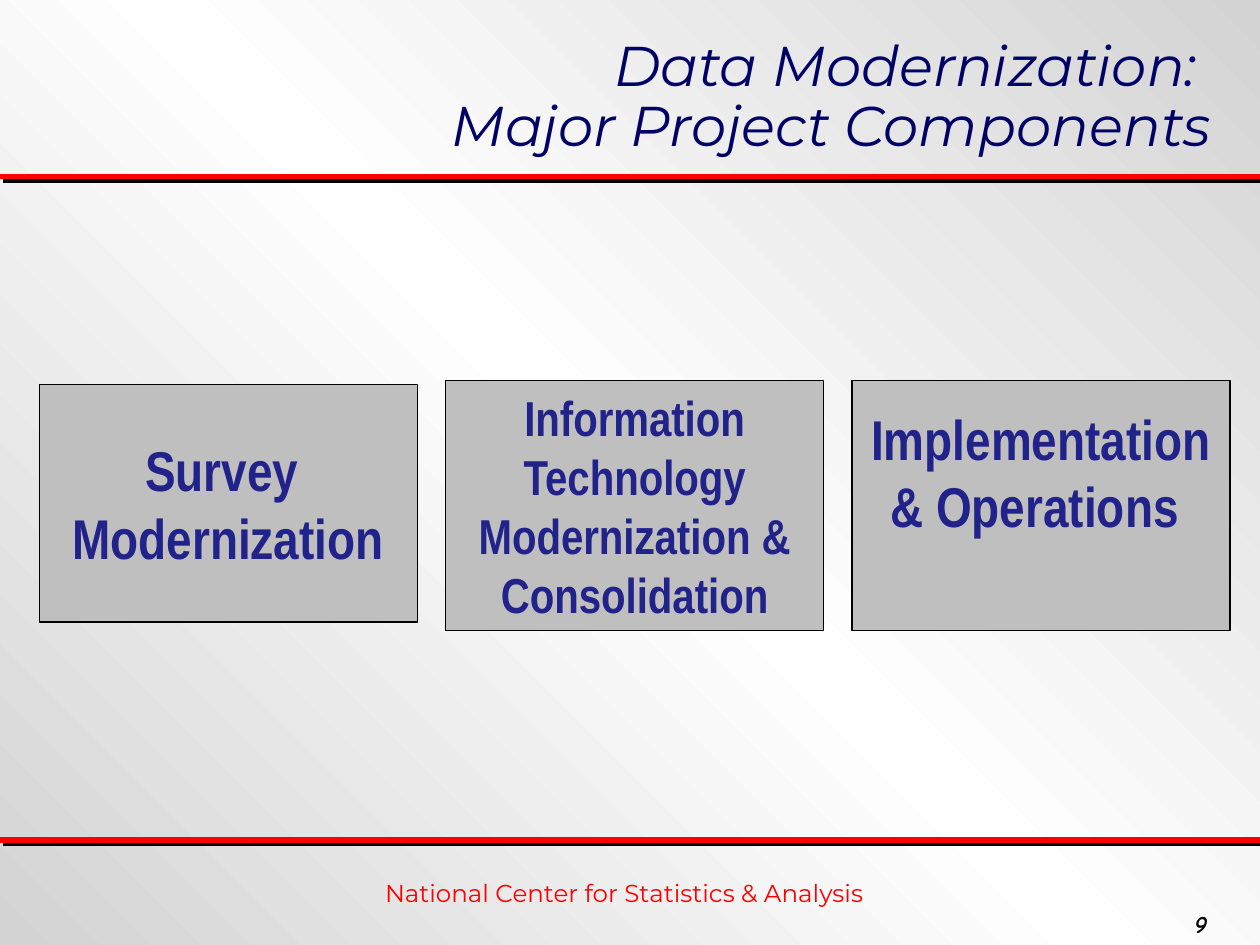
import pptx
import pptx.dml.color
import pptx.enum.shapes
import pptx.enum.text
import pptx.oxml
import pptx.oxml.ns
import pptx.util
from dataclasses import dataclass

Pt = pptx.util.Pt
Align = pptx.enum.text.PP_ALIGN
Anchor = pptx.enum.text.MSO_ANCHOR
NAMESPACE = pptx.oxml.ns.nsdecls("a")


@dataclass(frozen=True)
class Theme:
    heading_font: str = "Montserrat"
    box_font: str = "Arial Narrow"
    number_font: str = "Comic Neue"
    title_color: str = "000066"
    accent: str = "FF0000"
    ink: str = "000000"
    box_text: str = "22228B"
    box_fill: str = "BFBFBF"
    background: tuple = ((0, "D3D3D3"), (50, "FFFFFF"), (100, "D3D3D3"))
    large: int = 32
    medium: int = 28
    small: int = 14


def rgb(color):
    return pptx.dml.color.RGBColor.from_string(color)


class SlideBuilder:
    def __init__(self, slide, theme):
        self.slide = slide
        self.theme = theme

    def set_text(self, shape, text, font, size, color, align, bold=False, italic=False):
        frame = shape.text_frame
        frame.text = text
        for paragraph in frame.paragraphs:
            paragraph.alignment = align
            for run in paragraph.runs:
                run.font.name = font
                run.font.size = Pt(size)
                run.font.color.rgb = rgb(color)
                run.font.bold = bold
                run.font.italic = italic
        return frame

    def background(self):
        fill = self.slide.background.fill
        fill.gradient()
        fill.gradient_angle = 45
        stops = self.slide.element.find(".//" + pptx.oxml.ns.qn("a:gsLst"))
        for stop in list(stops):
            stops.remove(stop)
        for position, color in self.theme.background:
            stops.append(pptx.oxml.parse_xml(
                f'<a:gs {NAMESPACE} pos="{position * 1000}"><a:srgbClr val="{color}"/></a:gs>'))

    def title(self, text, left, top, width, height):
        shape = self.slide.shapes.title
        shape.left, shape.top, shape.width, shape.height = map(Pt, (left, top, width, height))
        frame = self.set_text(shape, text, self.theme.heading_font, self.theme.large,
                              self.theme.title_color, Align.RIGHT, italic=True)
        frame.auto_size = pptx.enum.text.MSO_AUTO_SIZE.NONE
        frame.vertical_anchor = Anchor.MIDDLE
        frame.paragraphs[0].line_spacing = 0.9

    def rule(self, top, width):
        line = self.slide.shapes.add_connector(
            pptx.enum.shapes.MSO_CONNECTOR.STRAIGHT, Pt(0), Pt(top), Pt(width), Pt(top))
        line.line.color.rgb = rgb(self.theme.accent)
        line.line.width = Pt(3)
        # Hard drop shadow, down and to the right
        line.element.spPr.append(pptx.oxml.parse_xml(
            f'<a:effectLst {NAMESPACE}><a:outerShdw blurRad="0" dist="{Pt(2.8)}" dir="2700000" '
            f'algn="ctr" rotWithShape="0"><a:srgbClr val="{self.theme.ink}"/>'
            '</a:outerShdw></a:effectLst>'))

    def label(self, text, left, top, width, height, font, color, align, **style):
        shape = self.slide.shapes.add_textbox(Pt(left), Pt(top), Pt(width), Pt(height))
        frame = self.set_text(shape, text, font, self.theme.small, color, align, **style)
        frame.word_wrap = True

    def box(self, text, left, top, width, height, size, bottom_margin):
        shape = self.slide.shapes.add_shape(
            pptx.enum.shapes.MSO_SHAPE.RECTANGLE, Pt(left), Pt(top), Pt(width), Pt(height))
        shape.shadow.inherit = False
        shape.fill.solid()
        shape.fill.fore_color.rgb = rgb(self.theme.box_fill)
        shape.line.color.rgb = rgb(self.theme.ink)
        shape.line.width = Pt(0.75)
        frame = self.set_text(shape, text, self.theme.box_font, size,
                              self.theme.box_text, Align.CENTER, bold=True)
        frame.word_wrap = True
        frame.vertical_anchor = Anchor.MIDDLE
        frame.margin_bottom = Pt(bottom_margin)


def main():
    theme = Theme()
    presentation = pptx.Presentation()
    presentation.slide_width, presentation.slide_height = Pt(720), Pt(540)
    slide = presentation.slides.add_slide(presentation.slide_layouts[5])
    builder = SlideBuilder(slide, theme)

    # Background, rules and footer
    builder.background()
    for top in (101, 480):
        builder.rule(top, 720)
    builder.label("National Center for Statistics & Analysis", 41.8, 498.2, 630, 24,
                  theme.heading_font, theme.accent, Align.CENTER)
    builder.label("9", 675.4, 516, 44, 24, theme.number_font, theme.ink,
                  Align.LEFT, bold=True, italic=True)

    # Title
    builder.title("Data Modernization: \vMajor Project Components", 25.2, 18, 674.6, 76.3)

    # Project components: text, top, height, type size, bottom margin
    components = (
        ("Survey \nModernization", 219.6, 135.8, theme.large, 3.6),
        ("Information Technology Modernization & Consolidation",
         217.3, 143.2, theme.medium, 3.6),
        ("Implementation & Operations ", 217.3, 143.2, theme.large, 42),
    )
    for index, (text, top, height, size, margin) in enumerate(components):
        builder.box(text, 22.5 + index * 232.2, top, 216, height, size, margin)

    presentation.save("out.pptx")


if __name__ == "__main__":
    main()
